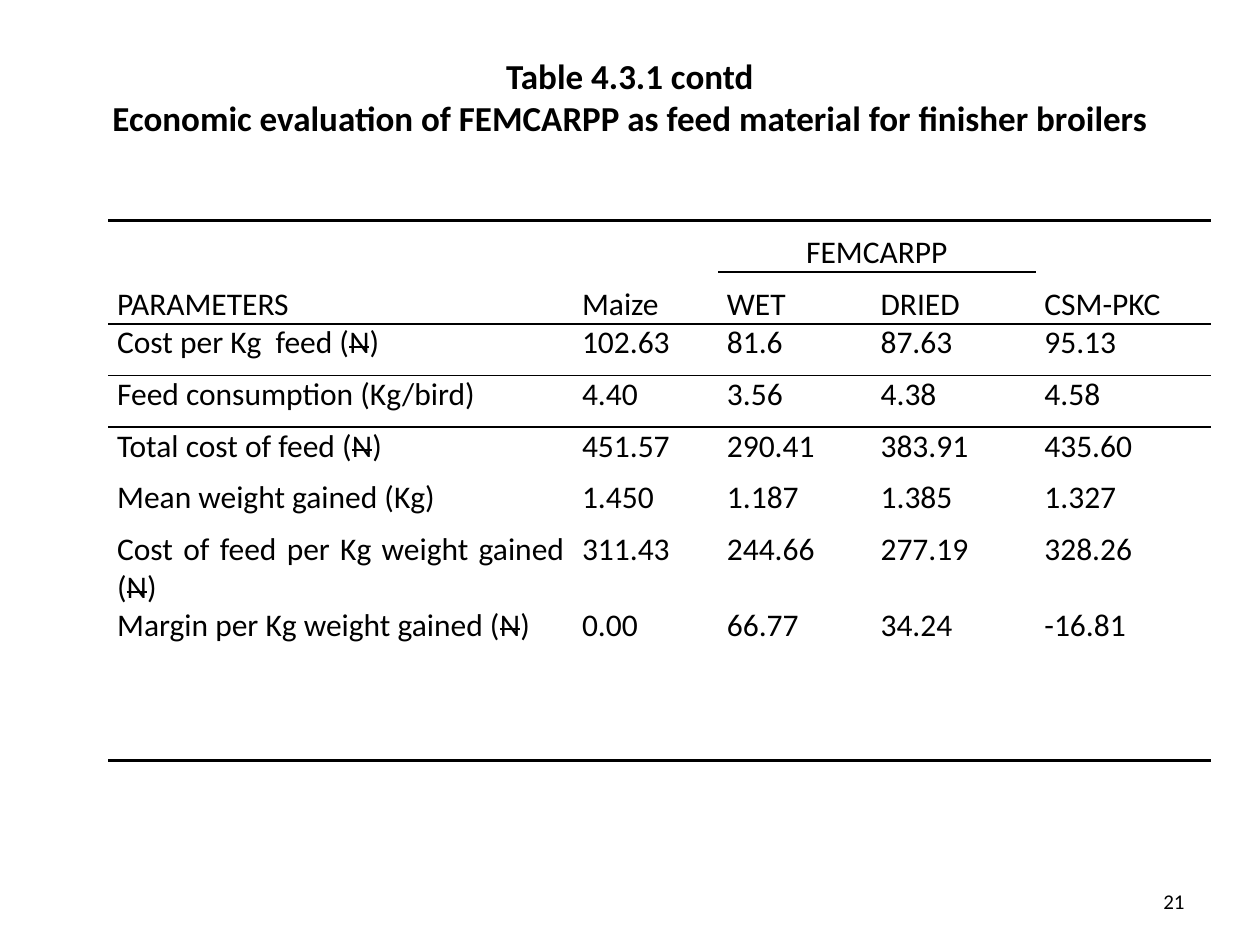
from pptx import Presentation
from pptx.dml.color import RGBColor
from pptx.enum.text import MSO_ANCHOR as Anchor, PP_ALIGN as Align
from pptx.oxml import parse_xml
from pptx.oxml.ns import nsdecls
from pptx.util import Inches, Pt

COLORS = {"ink": "000000", "paper": "FFFFFF"}
NO_GRID_STYLE = "{2D5ABB26-0587-4C30-8999-92F81FD0307C}"

COLUMN_WIDTHS = [3.69, 1.15, 1.22, 1.3, 1.39]
ROW_HEIGHT = 0.41
# "(N)" stands for the naira sign: its N is struck through
ROWS = [
    ["PARAMETERS", "Maize", "FEMCARPP", "", "CSM-PKC"],
    ["", "", "WET", "DRIED", ""],
    ["Cost per Kg  feed (N)", "102.63", "81.6", "87.63", "95.13"],
    ["Feed consumption (Kg/bird)", "4.40", "3.56", "4.38", "4.58"],
    ["Total cost of feed (N)", "451.57", "290.41", "383.91", "435.60"],
    ["Mean weight gained (Kg)", "1.450", "1.187", "1.385", "1.327"],
    ["Cost of feed per Kg weight gained (N)", "311.43", "244.66", "277.19", "328.26"],
    ["Margin per Kg weight gained (N)", "0.00", "66.77", "34.24", "-16.81"],
    [""] * 5,
    [""] * 5,
]
HEADER_ROWS = 2
MERGES = [(0, 0, 1, 0), (0, 1, 1, 1), (0, 2, 0, 3), (0, 4, 1, 4)]
# Points of the rule above each row; the last key is the table's foot
RULES = {0: 2, 1: 1, 2: 1, 3: 1, 10: 2}


class SlideBuilder:
    def __init__(self, slide, font="Calibri"):
        self.slide = slide
        self.font = font

    def style_font(self, font, size, bold=False):
        values = {"name": self.font, "size": Pt(size), "bold": bold}
        for name, value in values.items():
            setattr(font, name, value)
        font.color.rgb = RGBColor.from_string(COLORS["ink"])

    def text(self, wording, box, size, align, bold=False):
        frame = self.slide.shapes.add_textbox(*map(Inches, box)).text_frame
        frame.word_wrap = True
        frame.vertical_anchor = Anchor.MIDDLE
        paragraph = frame.paragraphs[0]
        paragraph.text = wording
        paragraph.alignment = align
        for run in paragraph.runs:
            self.style_font(run.font, size, bold)

    def rule(self, cell, side, points):
        cell._tc.get_or_add_tcPr().append(parse_xml(
            f'<a:{side} {nsdecls("a")} w="{Pt(points)}"><a:solidFill>'
            f'<a:srgbClr val="{COLORS["ink"]}"/></a:solidFill></a:{side}>'))

    def cell(self, cell, wording, align, anchor, size=18):
        values = {"margin_left": Inches(0.07), "margin_right": Inches(0.07),
                  "margin_top": 0, "margin_bottom": 0, "vertical_anchor": anchor}
        for name, value in values.items():
            setattr(cell, name, value)
        cell.fill.solid()
        cell.fill.fore_color.rgb = RGBColor.from_string(COLORS["paper"])
        paragraph = cell.text_frame.paragraphs[0]
        paragraph.alignment = align
        self.style_font(paragraph.font, size)
        label, naira, _ = wording.partition("(N)")
        parts = [label + "(", "N", ")"] if naira else [label]
        for part in filter(None, parts):
            run = paragraph.add_run()
            run.text = part
            self.style_font(run.font, size)
            if naira and part == "N":
                run.font._element.set("strike", "sngStrike")

    def table(self, left, top):
        table = self.slide.shapes.add_table(
            len(ROWS), len(COLUMN_WIDTHS), Inches(left), Inches(top),
            Inches(sum(COLUMN_WIDTHS)), Inches(ROW_HEIGHT * len(ROWS))).table
        table._tbl.tblPr.find("{*}tableStyleId").text = NO_GRID_STYLE
        table.first_row = table.horz_banding = False
        for column, width in zip(table.columns, COLUMN_WIDTHS):
            column.width = Inches(width)
        for row in table.rows:
            row.height = Inches(ROW_HEIGHT)
        for row1, col1, row2, col2 in MERGES:
            table.cell(row1, col1).merge(table.cell(row2, col2))

        for r, row in enumerate(ROWS):
            anchor = Anchor.BOTTOM if r < HEADER_ROWS else Anchor.TOP
            for c, wording in enumerate(row):
                cell = table.cell(r, c)
                # No rule runs through a cell merged downwards
                if r in RULES and (r == 0 or not cell.is_spanned):
                    self.rule(cell, "lnT", RULES[r])
                if r + 1 in RULES:
                    self.rule(cell, "lnB", RULES[r + 1])
                align = Align.CENTER if wording == "FEMCARPP" else Align.JUSTIFY
                self.cell(cell, wording, align, anchor)


def main():
    deck = Presentation()
    deck.slide_width, deck.slide_height = Inches(10), Inches(7.5)
    builder = SlideBuilder(deck.slides.add_slide(deck.slide_layouts[6]))

    # Title
    builder.text("Table 4.3.1 contd\vEconomic evaluation of FEMCARPP as feed "
                 "material for finisher broilers",
                 (0.5, 0.3, 9, 0.93), 20, Align.CENTER, bold=True)
    # Economic evaluation table
    builder.table(0.86, 1.75)
    # Page number
    builder.text("21", (7.17, 6.95, 2.33, 0.4), 12, Align.RIGHT)

    deck.save("out.pptx")


if __name__ == "__main__":
    main()
